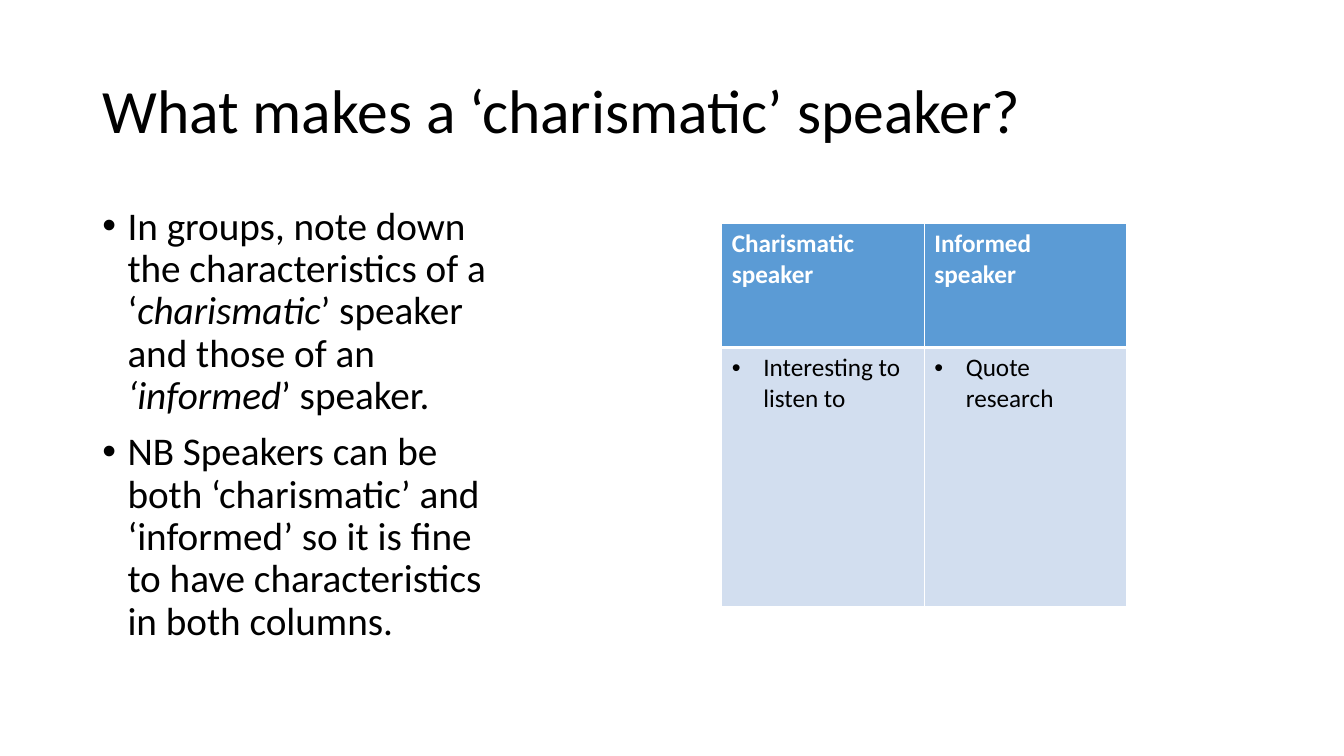
from lxml.etree import SubElement
from pptx import Presentation
from pptx.dml.color import RGBColor
from pptx.enum.text import MSO_ANCHOR
from pptx.oxml.ns import qn
from pptx.util import Pt

BLACK = RGBColor(0x00, 0x00, 0x00)
WHITE = RGBColor(0xFF, 0xFF, 0xFF)
HEADER_BLUE = RGBColor(0x5B, 0x9B, 0xD5)
CELL_BLUE = RGBColor(0xD2, 0xDE, 0xEF)

TITLE = "What makes a ‘charismatic’ speaker?"
# Each instruction is a list of (text, italic) parts
INSTRUCTIONS = [
    [
        ("In groups, note down the characteristics of a ‘", False),
        ("charismatic", True),
        ("’ speaker and those of an ", False),
        ("‘informed", True),
        ("’ speaker.", False),
    ],
    [("NB Speakers can be both ‘charismatic’ and ‘informed’ so it is fine "
      "to have characteristics in both columns.", False)],
]
SPEAKERS = [
    ["Charismatic speaker", "Informed speaker"],
    ["Interesting to listen to", "Quote research"],
]
ROW_HEIGHTS = [88.5, 185]


def add_run(paragraph, text, size, color=BLACK, bold=False, italic=False):
    run = paragraph.add_run()
    run.text = text
    run.font.color.rgb = color
    formats = {"name": "Calibri", "size": Pt(size), "bold": bold, "italic": italic}
    for name, value in formats.items():
        setattr(run.font, name, value)


def add_bullet(paragraph, indent):
    properties = paragraph._p.get_or_add_pPr()
    properties.set("marL", str(Pt(indent)))
    properties.set("indent", str(-Pt(indent)))
    SubElement(properties, qn("a:buFont"), typeface="Arial")
    SubElement(properties, qn("a:buChar"), char="•")


def add_text_frame(slide, box, anchor):
    frame = slide.shapes.add_textbox(*map(Pt, box)).text_frame
    frame.word_wrap = True
    frame.vertical_anchor = anchor
    return frame


def add_borders(cell, bottom_width):
    properties = cell._tc.get_or_add_tcPr()
    for side, width in {"L": 1, "R": 1, "T": 1, "B": bottom_width}.items():
        line = SubElement(properties, qn(f"a:ln{side}"), w=str(Pt(width)))
        fill = SubElement(line, qn("a:solidFill"))
        SubElement(fill, qn("a:srgbClr"), val=str(WHITE))


def add_title(slide, box):
    heading = add_text_frame(slide, box, MSO_ANCHOR.MIDDLE).paragraphs[0]
    heading.line_spacing = 0.9
    add_run(heading, TITLE, 44)


def add_instructions(slide, box):
    frame = add_text_frame(slide, box, MSO_ANCHOR.TOP)
    for index, parts in enumerate(INSTRUCTIONS):
        instruction = frame.add_paragraph() if index else frame.paragraphs[0]
        add_bullet(instruction, 18)
        instruction.line_spacing = 0.9
        if index:
            instruction.space_before = Pt(10)
        for text, italic in parts:
            add_run(instruction, text, 28, italic=italic)


def add_speaker_table(slide, box):
    left, top, width, height = map(Pt, box)
    table = slide.shapes.add_table(
        len(SPEAKERS), len(SPEAKERS[0]), left, top, width, height).table
    for row, row_height in zip(table.rows, ROW_HEIGHTS):
        row.height = Pt(row_height)
    for row_index, texts in enumerate(SPEAKERS):
        is_header = row_index == 0
        for column_index, text in enumerate(texts):
            cell = table.cell(row_index, column_index)
            # Borders come before the fill in the cell properties
            add_borders(cell, 3 if is_header else 1)
            cell.fill.solid()
            cell.fill.fore_color.rgb = HEADER_BLUE if is_header else CELL_BLUE
            entry = cell.text_frame.paragraphs[0]
            if not is_header:
                add_bullet(entry, 22.5)
            add_run(entry, text, 18, WHITE if is_header else BLACK, bold=is_header)


def main():
    presentation = Presentation()
    presentation.slide_width = Pt(960)
    presentation.slide_height = Pt(540)
    slide = presentation.slides.add_slide(presentation.slide_layouts[6])
    add_title(slide, (66, 28.75, 828, 104.4))
    add_instructions(slide, (66, 143.75, 291.6, 342.7))
    add_speaker_table(slide, (515.5, 159.8, 289.4, sum(ROW_HEIGHTS)))
    presentation.save("out.pptx")


if __name__ == "__main__":
    main()
